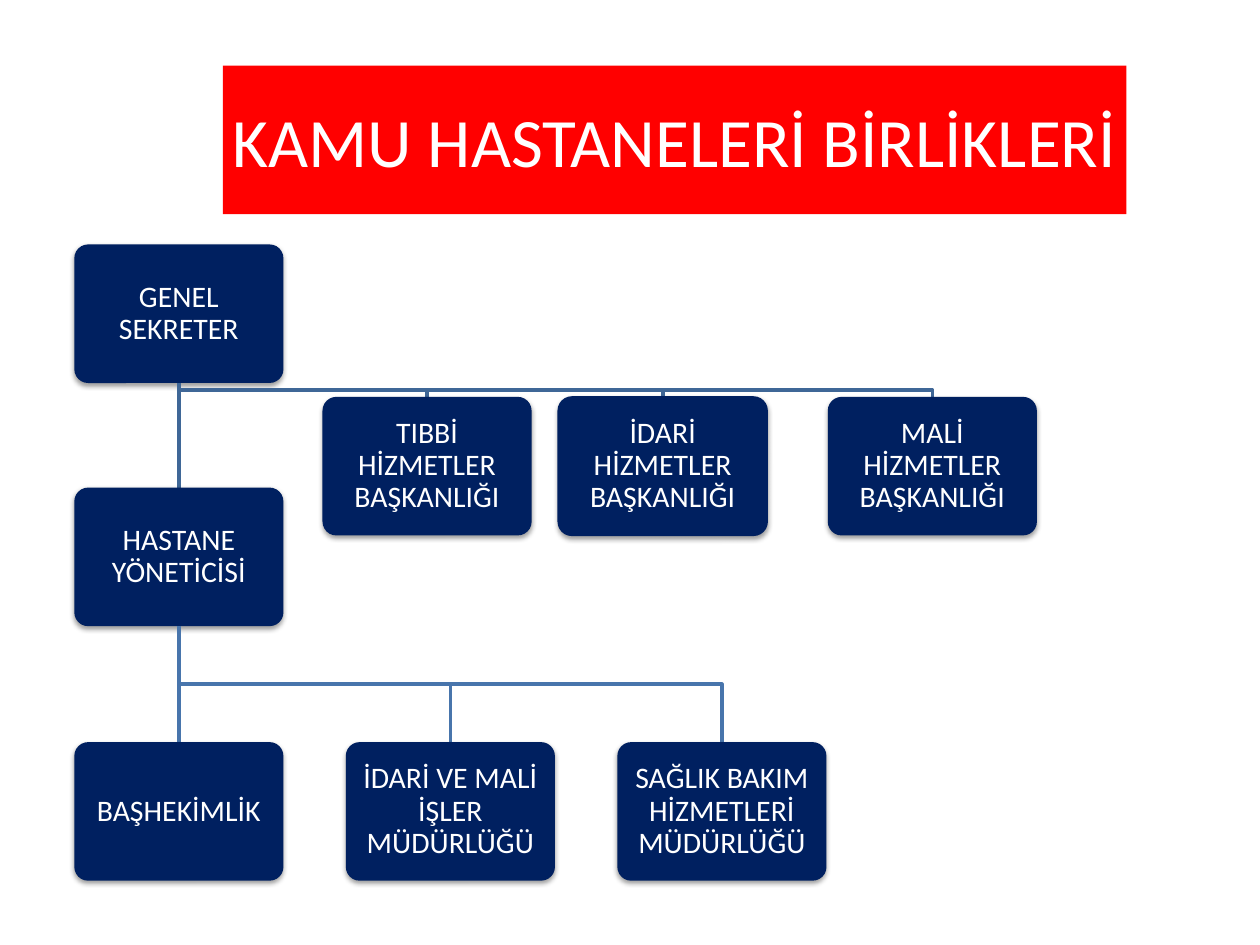
from lxml import etree
from pptx import Presentation
from pptx.dml.color import RGBColor
from pptx.enum.shapes import MSO_CONNECTOR, MSO_SHAPE
from pptx.enum.text import MSO_ANCHOR, PP_ALIGN
from pptx.oxml.ns import qn
from pptx.util import Inches, Pt

RECT = MSO_SHAPE.RECTANGLE
ROUNDED = MSO_SHAPE.ROUNDED_RECTANGLE
STRAIGHT = MSO_CONNECTOR.STRAIGHT
MIDDLE = MSO_ANCHOR.MIDDLE
CENTER = PP_ALIGN.CENTER

NAVY, RED, WHITE = "002060", "FF0000", "FFFFFF"
UPPER_LINE, LOWER_LINE = "3F6797", "4875AC"
BOX_W, BOX_H = 1.66, 1.1
TRUNK_LEFT = 0.59
TOP_Y, STAFF_Y, MANAGER_Y, UNIT_Y = 1.94, 3.15, 3.87, 5.89
UNIT_STEP = 2.155


def color(value):
    return RGBColor.from_string(value)


def write(sp, text, size, inset=0.1, spacing=1.0):
    tf = sp.text_frame
    tf.word_wrap = True
    tf.vertical_anchor = MIDDLE
    tf.margin_left = tf.margin_right = Inches(inset)
    tf.margin_top = tf.margin_bottom = Inches(inset)
    p = tf.paragraphs[0]
    p.alignment = CENTER
    p.line_spacing = spacing
    r = p.add_run()
    r.text = text
    r.font.size = Pt(size)
    r.font.name = "Calibri"
    r.font.color.rgb = color(WHITE)


def add_block(slide, kind, box, fill):
    sp = slide.shapes.add_shape(kind, *map(Inches, box))
    sp.fill.solid()
    sp.fill.fore_color.rgb = color(fill)
    sp.line.fill.background()
    sp.shadow.inherit = False
    return sp


def add_shadow(sp):
    effects = sp._element.spPr.find(qn("a:effectLst"))
    shadow = etree.SubElement(
        effects, qn("a:outerShdw"), blurRad=str(Pt(3.1)), dist=str(Pt(1.6)),
        dir="5400000", rotWithShape="0")
    tone = etree.SubElement(shadow, qn("a:srgbClr"), val="000000")
    etree.SubElement(tone, qn("a:alpha"), val="38000")


def add_title(slide, box, text):
    sp = add_block(slide, RECT, box, RED)
    write(sp, text, 39.6, inset=0.05)


def add_unit(slide, left, top, text, outlined=False):
    sp = add_block(slide, ROUNDED, (left, top, BOX_W, BOX_H), NAVY)
    sp.adjustments[0] = 0.1
    if outlined:
        sp.line.color.rgb = color(NAVY)
        sp.line.width = Pt(0.75)
    add_shadow(sp)
    write(sp, text, 17, spacing=0.9)


def add_branch(slide, start, end, line_color):
    x1, y1, x2, y2 = map(Inches, (*start, *end))
    if x1 == x2:
        branch = slide.shapes.add_connector(STRAIGHT, x1, y1, x2, y2)
        etree.SubElement(branch._element.spPr, qn("a:effectLst"))
    else:
        middle = (y1 + y2) // 2
        builder = slide.shapes.build_freeform(x1, y1)
        builder.add_line_segments([(x1, middle), (x2, middle), (x2, y2)], close=False)
        branch = builder.convert_to_shape()
        branch.fill.background()
        branch.shadow.inherit = False
    branch.line.color.rgb = color(line_color)
    branch.line.width = Pt(2)


def add_level(slide, parent_top, children, line_color):
    trunk = TRUNK_LEFT + BOX_W / 2
    for left, top, *_ in children:
        add_branch(slide, (trunk, parent_top + BOX_H), (left + BOX_W / 2, top), line_color)
    for child in children:
        add_unit(slide, *child)


def add_chart_tree(slide):
    add_unit(slide, TRUNK_LEFT, TOP_Y, "GENEL SEKRETER")
    add_level(slide, TOP_Y, [
        (6.57, STAFF_Y, "MALİ HİZMETLER BAŞKANLIĞI"),
        (TRUNK_LEFT, MANAGER_Y, "HASTANE YÖNETİCİSİ"),
        (4.43, STAFF_Y, "İDARİ HİZMETLER BAŞKANLIĞI", True),
        (2.56, STAFF_Y, "TIBBİ HİZMETLER BAŞKANLIĞI"),
    ], UPPER_LINE)
    units = ["BAŞHEKİMLİK", "İDARİ VE MALİ İŞLER MÜDÜRLÜĞÜ",
             "SAĞLIK BAKIM HİZMETLERİ MÜDÜRLÜĞÜ"]
    add_level(slide, MANAGER_Y, [
        (TRUNK_LEFT + i * UNIT_STEP, UNIT_Y, name) for i, name in enumerate(units)
    ], LOWER_LINE)


def main():
    prs = Presentation()
    prs.slide_width, prs.slide_height = Inches(10), Inches(7.5)
    slide = prs.slides.add_slide(prs.slide_layouts[6])
    add_title(slide, (1.77, 0.52, 7.17, 1.18), "KAMU HASTANELERİ BİRLİKLERİ")
    add_chart_tree(slide)
    prs.save("out.pptx")


if __name__ == "__main__":
    main()
